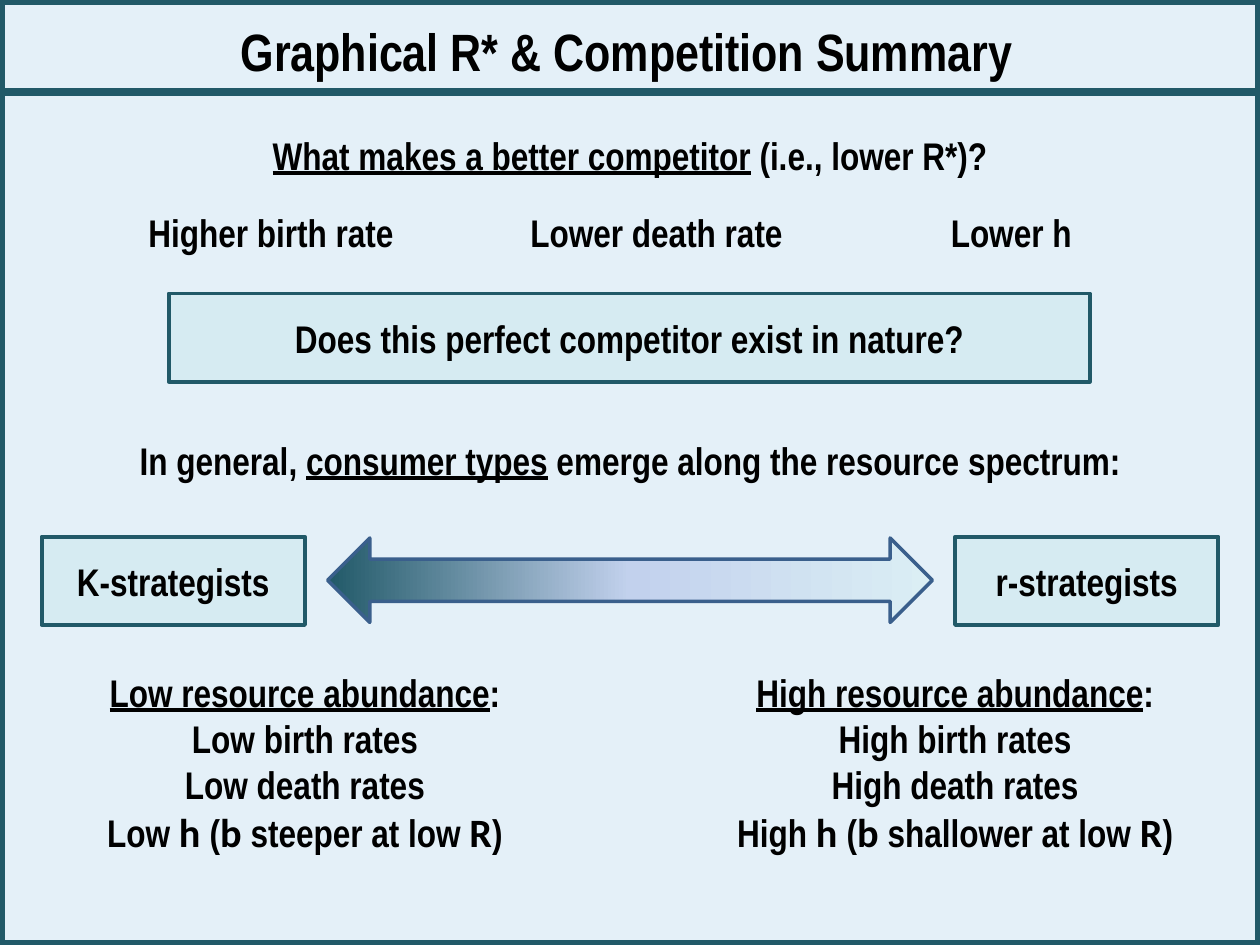
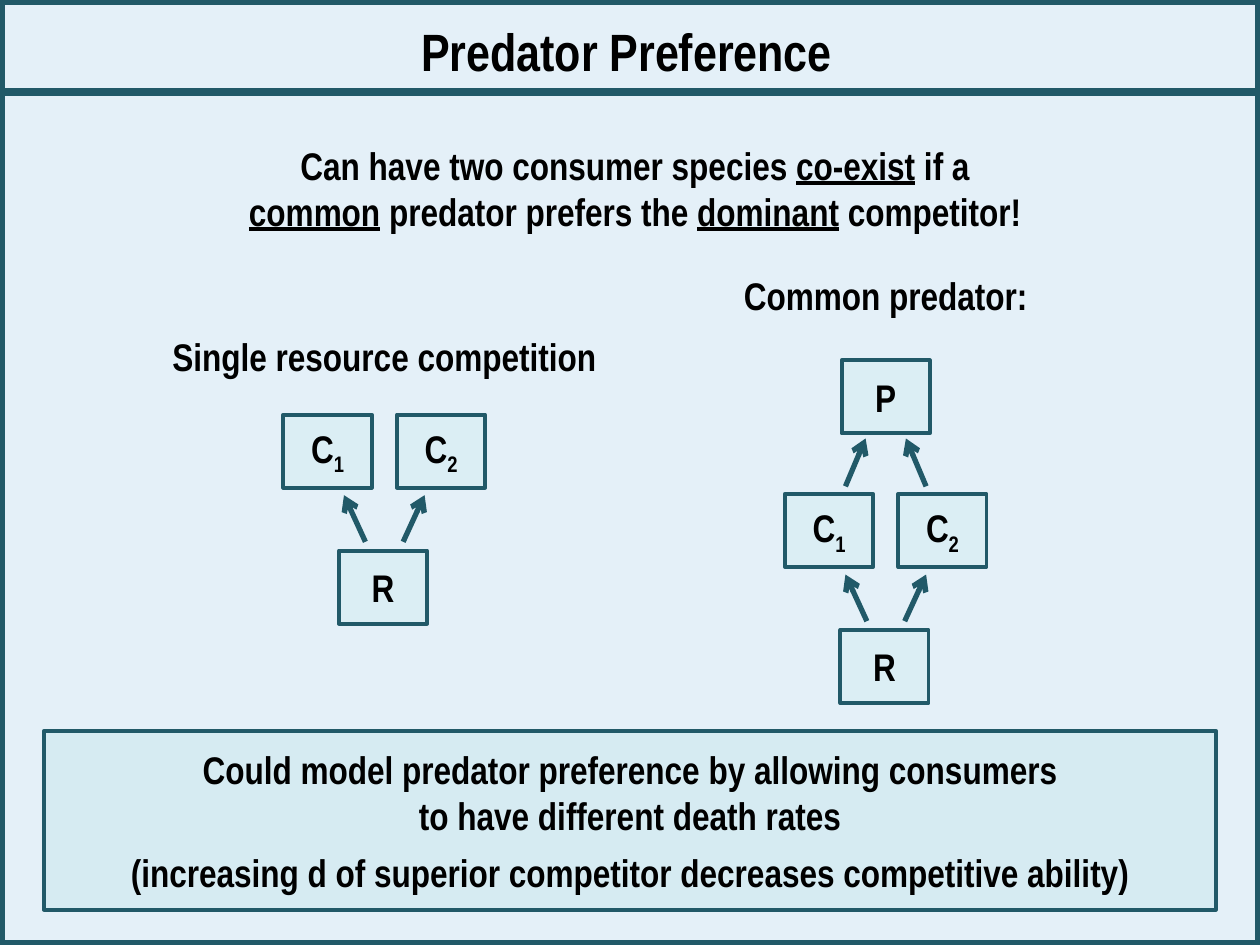
"""Build two slides on resource competition and predator preference."""
import copy
import pptx
import pptx.util
import pptx.dml.color
import pptx.enum.shapes
import pptx.enum.text
import pptx.oxml.ns
from lxml import etree

Inches, Pt = pptx.util.Inches, pptx.util.Pt
Kind = pptx.enum.shapes.MSO_SHAPE
Link = pptx.enum.shapes.MSO_CONNECTOR
Text = pptx.enum.text
qn = pptx.oxml.ns.qn

HUES = {"page": "E4F0F8", "edge": "215968", "panel": "D6EBF2", "node": "DBEEF4",
        "mid": "C2D1ED", "rim": "3A5F8C", "ink": "000000"}
BODY = {"name": "Arial Narrow", "size": Pt(22), "bold": True}
HEAD = {**BODY, "size": Pt(30)}
RUNS = {"line": {"underline": True}, "math": {"name": "Calibri", "size": Pt(23)}, "sub": {}}
FRAME = {"auto_size": Text.MSO_AUTO_SIZE.NONE, "word_wrap": True}
MID, TOP = Text.MSO_ANCHOR.MIDDLE, Text.MSO_ANCHOR.TOP


def traits(level, slope):
    """List the traits that go with one level of resource."""
    return [[(f"{level} resource abundance", "line"), ":"],
            [f"{level} birth rates"],
            [f"{level} death rates"],
            [f"{level} ", ("h ", "math"), "(", ("b", "math"),
             f" {slope} at low ", ("R", "math"), ")"]]


SUMMARY = {
    "title": "Graphical R* & Competition Summary",
    "texts": [
        ((0.3, 1, 9.4, 0.47),
         [[("What makes a better competitor", "line"), " (i.e., lower R*)?"]]),
        ((0.92, 1.61, 2.46, 0.47), [["Higher birth rate"]]),
        ((4.02, 1.61, 2.38, 0.47), [["Lower death rate"]]),
        ((7.25, 1.61, 1.55, 0.47), [["Lower h"]]),
        ((0.29, 3.42, 9.42, 0.47),
         [["In general, ", ("consumer types", "line"),
           " emerge along the resource spectrum:"]]),
        ((0.38, 5.26, 4.08, 1.6), traits("Low", "steeper")),
        ((5.54, 5.26, 4.08, 1.6), traits("High", "shallower")),
    ],
    "panels": [
        ((1.34, 2.33, 7.31, 0.7), [["Does this perfect competitor exist in nature?"]]),
        ((0.33, 4.26, 2.09, 0.7), [["K-strategists"]]),
        ((7.58, 4.26, 2.09, 0.7), [["r-strategists"]]),
    ],
}
PREDATOR = {
    "title": "Predator Preference",
    "texts": [
        ((0.42, 1.08, 9.24, 0.84),
         [["Can have two consumer species ", ("co-exist", "line"), " if a"],
          [("common", "line"), " predator prefers the ", ("dominant", "line"),
           " competitor!"]]),
        ((1.02, 2.59, 4.06, 0.47), [["Single resource competition"]]),
        ((5, 2.11, 4.06, 0.47), [["Common predator:"]]),
    ],
    "panels": [
        ((0.35, 5.8, 9.3, 1.42),
         [["Could model predator preference by allowing consumers"],
          ["to have different death rates"],
          ["(increasing d of superior competitor decreases competitive ability)"]]),
    ],
}
SPECTRUM = [(0, "edge"), (0.5, "mid"), (1, "node")]
NODES = {"C1": (0, 0, ["C", ("1", "sub")]), "C2": (0.9, 0, ["C", ("2", "sub")]),
         "R": (0.44, 1.08, ["R"]), "P": (0.45, -1.06, ["P"])}
NODE = (0.7, 0.58)
AXIS = 0.8
FEED = (0.15, 1.01, 0.32, 0.64)
HUNT = (0.32, -0.06, 0.16, -0.44)
WEBS = [((2.25, 3.29), ["C1", "C2", "R"], [FEED]),
        ((6.23, 3.92), ["C1", "C2", "R", "P"], [FEED, HUNT])]


def apply(item, form):
    """Set each named value on the item."""
    for key, value in form.items():
        setattr(item, key, value)


def hue(name):
    """Return the named colour."""
    return pptx.dml.color.RGBColor.from_string(HUES[name])


def write(shape, paras, font=BODY, anchor=MID):
    """Fill a shape with centred paragraphs of styled runs."""
    frame = shape.text_frame
    apply(frame, {**FRAME, "vertical_anchor": anchor})
    for i, runs in enumerate(paras):
        para = frame.add_paragraph() if i else frame.paragraphs[0]
        para.alignment = Text.PP_ALIGN.CENTER
        for part in runs:
            text, style = (part, None) if isinstance(part, str) else part
            run = para.add_run()
            run.text = text
            apply(run.font, {**font, **RUNS.get(style, {})})
            run.font.color.rgb = hue("ink")
            if style == "sub":
                run.font._element.set("baseline", "-25000")
    return frame


def stroke(item, width, name="edge"):
    """Set the outline of a shape or connector."""
    item.line.width = Pt(width)
    item.line.color.rgb = hue(name)


def box(slide, place, fill=None, width=2.25, kind=Kind.RECTANGLE, rim="edge"):
    """Add an outlined shape, hollow unless a fill is named."""
    shape = slide.shapes.add_shape(kind, *map(Inches, place))
    shape.shadow.inherit = False
    stroke(shape, width, rim)
    if fill:
        shape.fill.solid()
        shape.fill.fore_color.rgb = hue(fill)
    else:
        shape.fill.background()
    return shape


def rule(slide, ends, width, arrow=False):
    """Add a straight line, with an arrowhead at its end if asked."""
    line = slide.shapes.add_connector(Link.STRAIGHT, *map(Inches, ends))
    stroke(line, width)
    if arrow:
        etree.SubElement(line.line._get_or_add_ln(), qn("a:tailEnd"), type="arrow")
    etree.SubElement(line._element.spPr, qn("a:effectLst"))
    return line


def start(deck, data):
    """Add a slide with its title, panels and texts."""
    slide = deck.slides.add_slide(deck.slide_layouts[5])
    title = slide.shapes.title
    apply(title, dict(zip(("left", "top", "width", "height"),
                          map(Inches, (0.74, 0.1, 8.47, 0.61)))))
    write(title, [[data["title"]]], HEAD)
    for place, paras in data["panels"]:
        frame = write(box(slide, place, "panel"), paras)
        for para in frame.paragraphs[2:]:
            para.space_before = Pt(6)
    for place, paras in data["texts"]:
        write(slide.shapes.add_textbox(*map(Inches, place)), paras, anchor=TOP)
    return slide


def theme(deck):
    """Put the background, border and title band on the layout."""
    back = deck.slide_master.background.fill
    back.solid()
    back.fore_color.rgb = hue("page")
    layout = deck.slide_layouts[5]
    tree = layout.shapes.element
    for spot in list(layout.placeholders):
        if spot.placeholder_format.idx:
            tree.remove(spot.element)
    slide = deck.slides[0]
    for item in (box(slide, (0, 0, 10, 7.5), width=6),
                 rule(slide, (0.01, 0.73, 10, 0.73), 5)):
        tree.append(item.element)


def blend(slide):
    """Add the double arrow that spans the spectrum."""
    arrow = box(slide, (2.6, 4.27, 4.8, 0.67), width=2,
                kind=Kind.LEFT_RIGHT_ARROW, rim="rim")
    arrow.fill.gradient()
    arrow.fill.gradient_angle = 0
    stops = arrow.element.spPr.find(qn("a:gradFill")).find(qn("a:gsLst"))
    stops.insert(1, copy.deepcopy(stops[0]))
    for stop, (spot, name) in zip(arrow.fill.gradient_stops, SPECTRUM):
        stop.position = spot
        stop.color.rgb = hue(name)


def web(slide, origin, names, pairs):
    """Draw a food web with mirrored pairs of arrows."""
    left, top = origin
    for name in names:
        x, y, label = NODES[name]
        write(box(slide, (left + x, top + y, *NODE), "node"), [label])
    for x1, y1, x2, y2 in pairs:
        for side in (-1, 1):
            mid = left + AXIS
            rule(slide, (mid + side * x1, top + y1, mid + side * x2, top + y2), 3, True)


def main():
    """Build and save the slides."""
    deck = pptx.Presentation()
    apply(deck, {"slide_width": Inches(10), "slide_height": Inches(7.5)})
    first = start(deck, SUMMARY)
    theme(deck)
    blend(first)
    second = start(deck, PREDATOR)
    for origin, names, pairs in WEBS:
        web(second, origin, names, pairs)
    deck.save("out.pptx")


if __name__ == "__main__":
    main()
